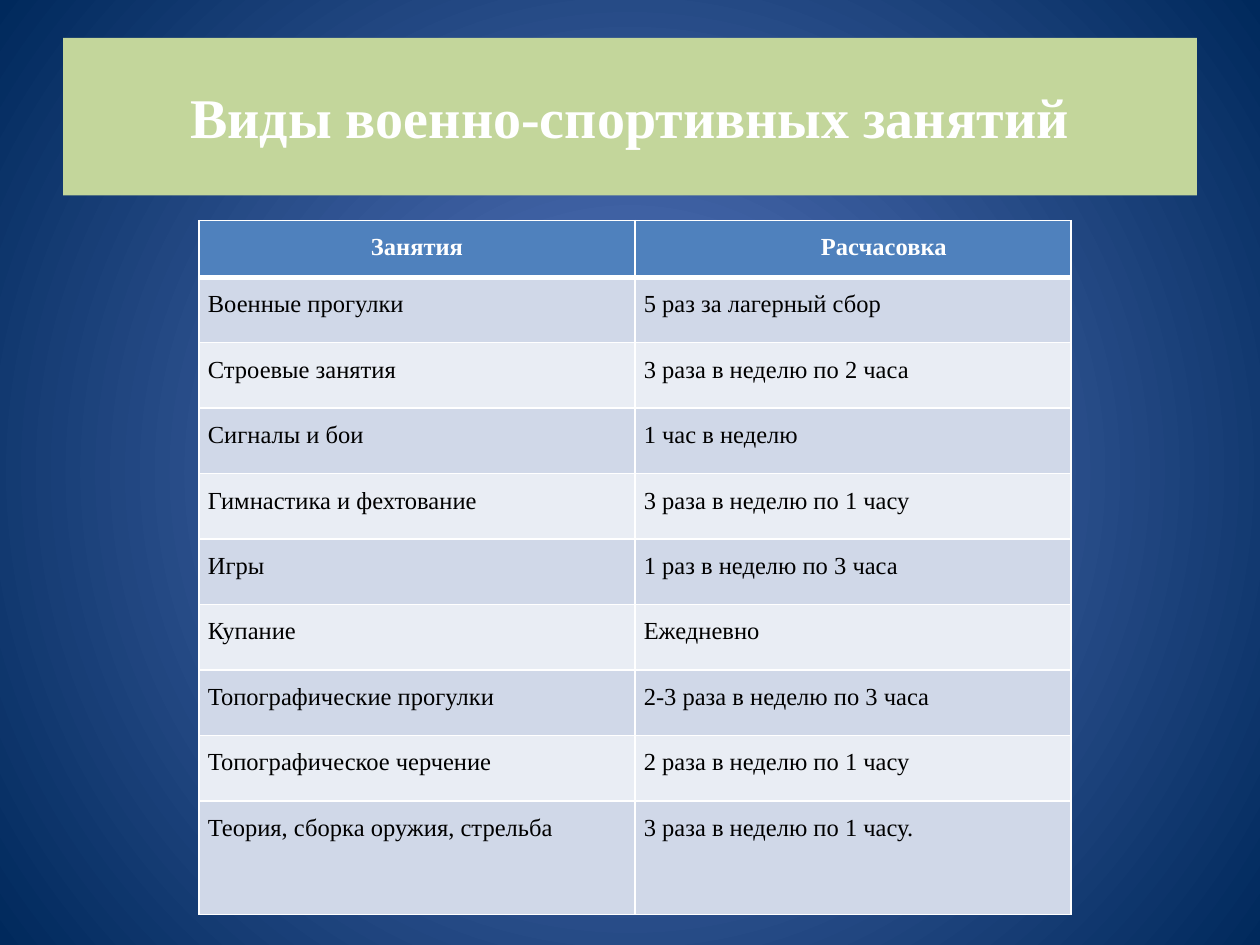
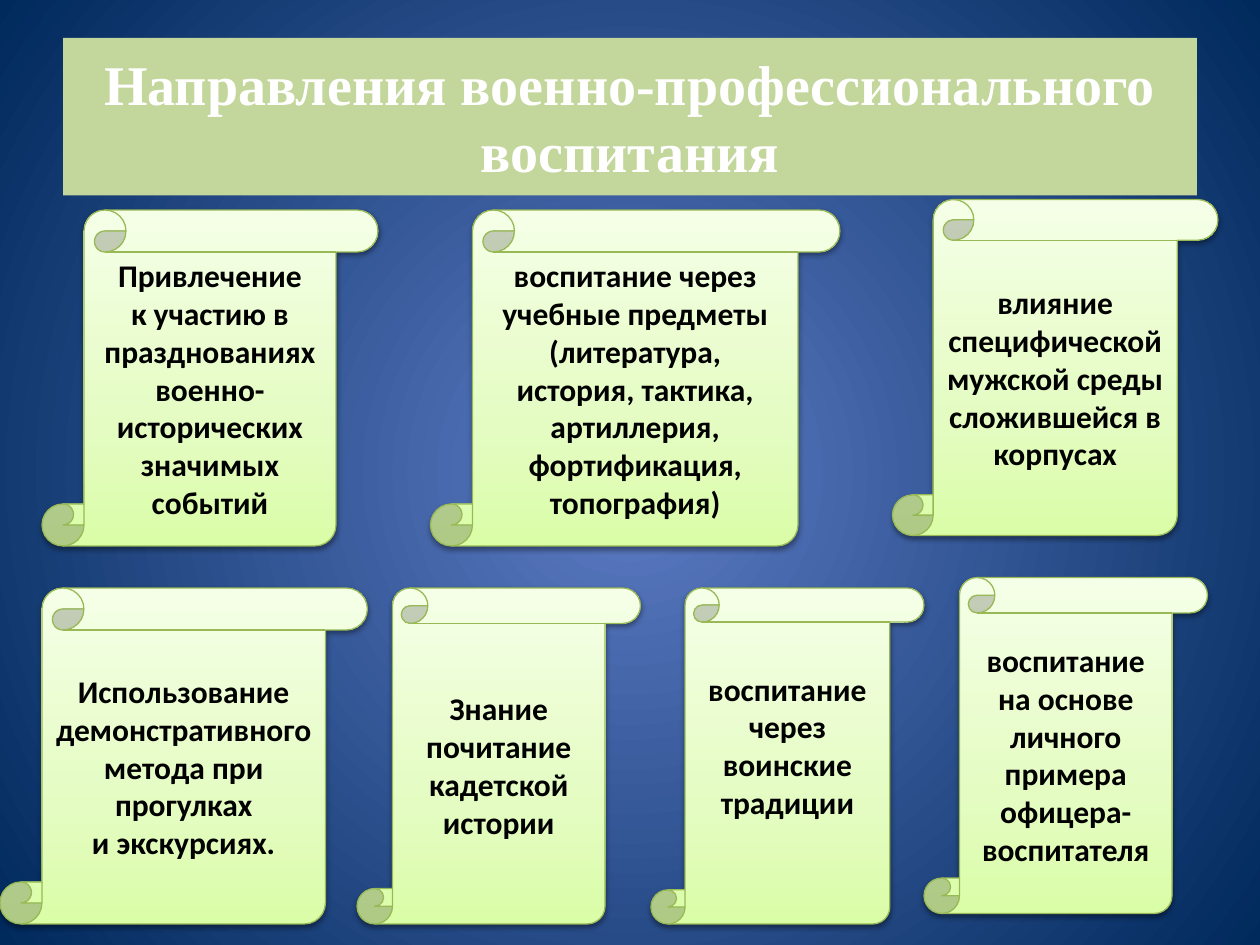
"""Build two slides on cadet military sports: a timetable and seven scrolls."""
from dataclasses import dataclass
from typing import Any

from lxml import etree
from pptx import Presentation
from pptx import util as u
from pptx.dml import color
from pptx.enum import shapes, text
from pptx.oxml import ns

Pt = u.Pt
HUES: dict[str, str] = {
    "glow": "5E7CC5", "navy": "00295C", "band": "C3D69B", "white": "FFFFFF",
    "black": "000000", "head": "4F81BD", "odd": "D0D8E8", "even": "E9EDF4",
    "lime": "DAFDA7", "pale": "E4FCC2", "cream": "F5FFE7", "edge": "98B955",
}
TITLE_FONT = {"name": "Times New Roman", "size": Pt(32), "bold": True}
CELL_FONT = {"name": "Times New Roman", "size": Pt(14)}
SCROLL_FONT = {"name": "Calibri", "size": Pt(18), "bold": True}
TITLE_BOX = {"left": Pt(36), "top": Pt(21.6), "width": Pt(648), "height": Pt(90)}
CELL_PAD = {"margin_left": Pt(5.04), "margin_right": Pt(5.04),
            "margin_top": 0, "margin_bottom": 0}
SCROLL_TALL = 192
INDENT = Pt(35.28)
ROWS = [
    ("Занятия", "Расчасовка"),
    ("Военные прогулки", "5 раз за лагерный сбор"),
    ("Строевые занятия", "3 раза в неделю по 2 часа"),
    ("Сигналы и бои", "1 час в неделю"),
    ("Гимнастика и фехтование", "3 раза в неделю по 1 часу"),
    ("Игры", "1 раз в неделю по 3 часа"),
    ("Купание", "Ежедневно"),
    ("Топографические прогулки", "2-3 раза в неделю по 3 часа"),
    ("Топографическое черчение", "2 раза в неделю по 1 часу"),
    ("Теория, сборка оружия, стрельба", "3 раза в неделю по 1 часу."),
]


@dataclass(frozen=True)
class Scroll:
    left: float
    top: float
    width: float
    words: str
    foot: float = 3.6


SCROLLS = [
    Scroll(246, 120, 234, "воспитание через учебные предметы (литература,\vистория, тактика,\n"
           "артиллерия, фортификация, топография)"),
    Scroll(528, 330, 162, "воспитание на основе личного примера офицера- воспитателя"),
    Scroll(24, 120, 192, "Привлечение\nк участию в празднованиях военно-исторических\n"
           "значимых событий"),
    Scroll(510, 114, 186, "влияние специфической мужской среды сложившейся в корпусах"),
    Scroll(372, 336, 156, "воспитание через воинские традиции", foot=25.6),
    Scroll(204, 336, 162, "Знание почитание кадетской истории"),
    Scroll(0, 336, 210, "Использование демонстративного метода при прогулках\nи экскурсиях."),
]


def put(item: Any, form: dict[str, Any]) -> None:
    for key, value in form.items():
        setattr(item, key, value)


def rgb(hue: str) -> color.RGBColor:
    return color.RGBColor.from_string(HUES[hue])


def fill(item: Any, hue: str) -> None:
    item.fill.solid()
    item.fill.fore_color.rgb = rgb(hue)


def style(para: Any, form: dict[str, Any], hue: str, align: Any) -> None:
    para.alignment = align
    put(para.font, form)
    para.font.color.rgb = rgb(hue)
    for run in para.runs:
        put(run.font, form)
        run.font.color.rgb = rgb(hue)


def node(base: Any, tag: str, **attrs: Any) -> Any:
    return etree.SubElement(base, ns.qn(tag), {k: str(v) for k, v in attrs.items()})


def blend(solid: Any, stops: list[tuple[int, str]]) -> Any:
    grad = etree.Element(ns.qn("a:gradFill"), {"rotWithShape": "1"})
    chain = node(grad, "a:gsLst")
    for place, hue in stops:
        node(node(chain, "a:gs", pos=place * 1000), "a:srgbClr", val=HUES[hue])
    solid.getparent().replace(solid, grad)
    return grad


def backdrop(deck: Any) -> None:
    master = deck.slide_master
    master.background.fill.solid()
    solid = master.element.xpath(".//p:bgPr/a:solidFill")[0]
    grad = blend(solid, [(0, "glow"), (100, "navy")])
    way = node(grad, "a:path", path="circle")
    node(way, "a:fillToRect", **dict.fromkeys("ltrb", 100000))


def new_slide(deck: Any, words: str) -> Any:
    slide = deck.slides.add_slide(deck.slide_layouts[5])
    title = slide.shapes.title
    put(title, TITLE_BOX)
    fill(title, "band")
    frame = title.text_frame
    frame.text = words
    put(frame, {"auto_size": text.MSO_AUTO_SIZE.NONE, "word_wrap": True,
                "vertical_anchor": text.MSO_ANCHOR.MIDDLE})
    style(frame.paragraphs[0], TITLE_FONT, "white", text.PP_ALIGN.CENTER)
    return slide


def border(cell: Any, wide: dict[str, float]) -> None:
    props = cell._tc.get_or_add_tcPr()
    for spot, side in enumerate("LRTB"):
        line = etree.Element(ns.qn(f"a:ln{side}"), {"w": str(Pt(wide.get(side, 1)))})
        node(node(line, "a:solidFill"), "a:srgbClr", val=HUES["white"])
        props.insert(spot, line)


def draw_table(slide: Any) -> None:
    grid = slide.shapes.add_table(len(ROWS), 2, Pt(113.76), Pt(126), Pt(498.24), Pt(396)).table
    highs = [32.4] + [37.44] * (len(ROWS) - 2) + [64.8]
    for r, (row, high) in enumerate(zip(ROWS, highs)):
        grid.rows[r].height = Pt(high)
        head = r == 0
        for c, words in enumerate(row):
            cell = grid.cell(r, c)
            cell.text = words
            put(cell, CELL_PAD)
            fill(cell, "head" if head else "odd" if r % 2 else "even")
            border(cell, {"B": 3} if head else {"T": 3} if r == 1 else {})
            para = cell.text_frame.paragraphs[0]
            para.line_spacing = 1.5
            style(para, CELL_FONT | {"bold": head}, "white" if head else "black",
                  text.PP_ALIGN.CENTER if head else text.PP_ALIGN.JUSTIFY)
    last = grid.cell(0, 1).text_frame.paragraphs[0]
    last._p.get_or_add_pPr().set("indent", str(INDENT))


def draw_scroll(slide: Any, item: Scroll) -> None:
    shape = slide.shapes.add_shape(shapes.MSO_SHAPE.VERTICAL_SCROLL, Pt(item.left), Pt(item.top),
                                   Pt(item.width), Pt(SCROLL_TALL))
    shape.fill.solid()
    solid = shape.element.xpath("./p:spPr/a:solidFill")[0]
    grad = blend(solid, [(0, "lime"), (35, "pale"), (100, "cream")])
    node(grad, "a:lin", ang=270 * 60000, scaled=1)
    shape.line.color.rgb = rgb("edge")
    shape.line.width = Pt(0.75)
    shape.shadow.inherit = False
    effects = shape.element.xpath("./p:spPr/a:effectLst")[0]
    shade = node(effects, "a:outerShdw", blurRad=Pt(3.1), dist=Pt(1.6), dir=90 * 60000,
                 rotWithShape=0)
    node(node(shade, "a:srgbClr", val=HUES["black"]), "a:alpha", val=38000)
    frame = shape.text_frame
    frame.text = item.words
    put(frame, {"word_wrap": True, "vertical_anchor": text.MSO_ANCHOR.MIDDLE,
                "margin_bottom": Pt(item.foot)})
    for para in frame.paragraphs:
        style(para, SCROLL_FONT, "black", text.PP_ALIGN.CENTER)


def main() -> None:
    deck = Presentation()
    put(deck, {"slide_width": Pt(720), "slide_height": Pt(540)})
    backdrop(deck)
    draw_table(new_slide(deck, "Виды военно-спортивных занятий"))
    slide = new_slide(deck, "Направления военно-профессионального воспитания")
    for item in SCROLLS:
        draw_scroll(slide, item)
    deck.save("out.pptx")


if __name__ == "__main__":
    main()
